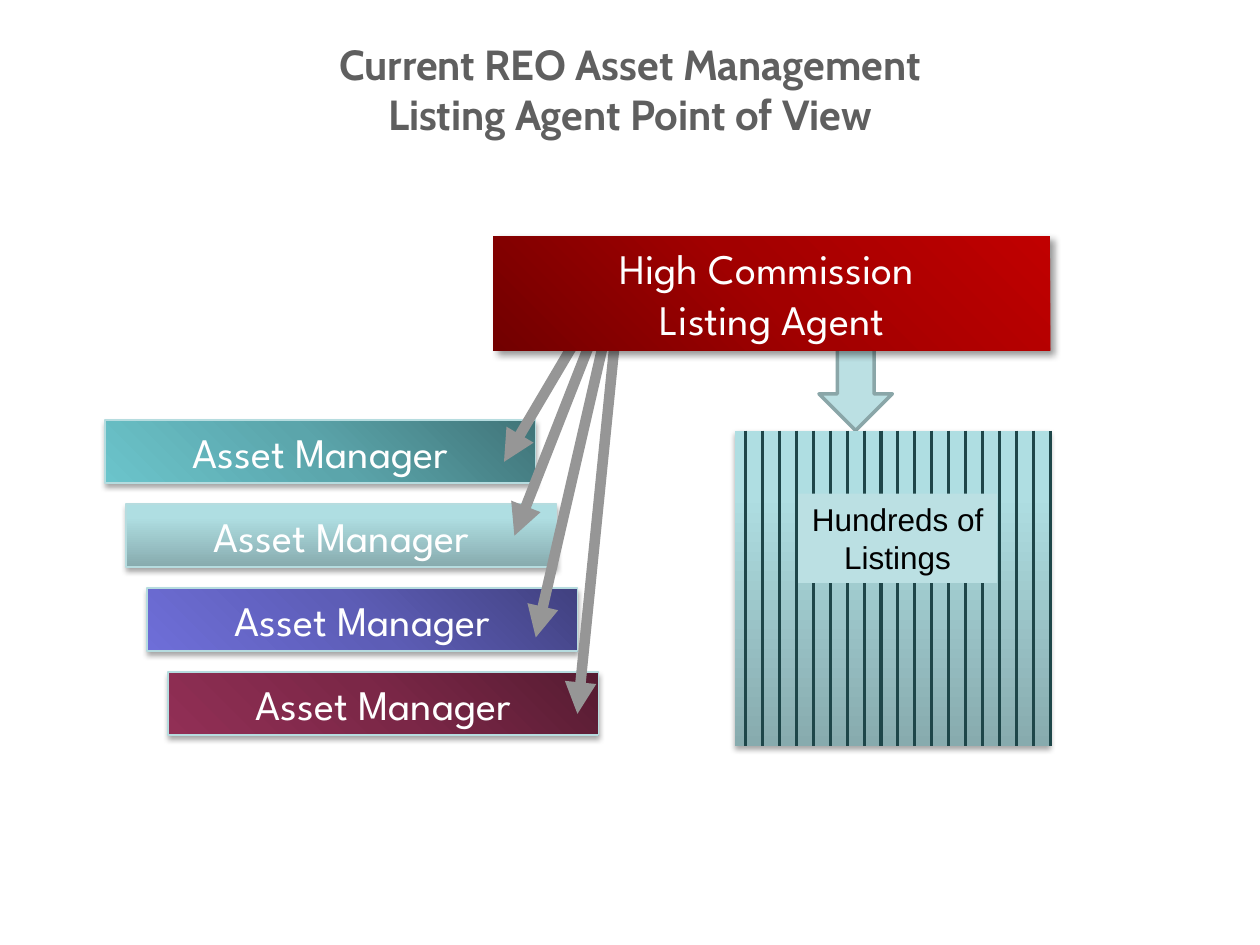
"""Build the slide on the listing agent's view of REO asset management."""
import dataclasses

import pptx
import pptx.dml.color
import pptx.enum.shapes
import pptx.enum.text
import pptx.oxml
import pptx.oxml.ns
import pptx.util

Cm = pptx.util.Cm
Pt = pptx.util.Pt
SHAPE = pptx.enum.shapes.MSO_SHAPE
ANCHOR = pptx.enum.text.MSO_ANCHOR
qn = pptx.oxml.ns.qn


def rgb(value):
    return pptx.dml.color.RGBColor.from_string(value)


def add_xml(parent, xml):
    tag, rest = xml.split(" ", 1)
    parent.append(pptx.oxml.parse_xml(f"{tag} {pptx.oxml.ns.nsdecls('a')} {rest}"))


@dataclasses.dataclass(frozen=True)
class Gradient:
    stops: tuple
    angle: int = 0
    focus: str = ""

    def direction(self):
        if self.focus:
            return f'<a:path path="circle"><a:fillToRect {self.focus}/></a:path>'
        return f'<a:lin ang="{self.angle * 60000}" scaled="1"/>'


@dataclasses.dataclass(frozen=True)
class Shadow:
    alpha: int
    blur: float
    distance: float
    angle: int


@dataclasses.dataclass(frozen=True)
class Theme:
    title_font: str = "Cabin"
    box_font: str = "League Spartan"
    label_font: str = "Arial"
    large: int = 24
    small: int = 18
    title: str = "5F5F5F"
    white: str = "FFFFFF"
    black: str = "000000"
    pale: str = "BBE0E3"
    pale_edge: str = "8AA6A8"
    bar_edge: str = "B6DCDF"
    arrow: str = "969696"
    stripe: str = "1E4649"
    teal: Gradient = Gradient(((0, "407478"), (50, "5BA5AB"), (100, "6BC4CB")), 135)
    mint: Gradient = Gradient(((0, "87ABAE"), (80, "AFDEE2"), (100, "AFE0E4")), 270)
    violet: Gradient = Gradient(((0, "414180"), (50, "5D5DB6"), (100, "6E6ED8")), 135)
    plum: Gradient = Gradient(((0, "561C32"), (50, "7B2747"), (100, "912F55")),
                              focus='l="100000" b="100000"')
    red: Gradient = Gradient(((0, "720000"), (50, "A20000"), (100, "C00000")),
                             focus='t="100000" r="100000"')
    low_shadow: Shadow = Shadow(35, 3.1, 1.8, 90)
    side_shadow: Shadow = Shadow(40, 4, 3, 45)


class SlideBuilder:
    def __init__(self, prs, theme):
        self.theme = theme
        self.s = prs.slides.add_slide(prs.slide_layouts[5])

    def text(self, sp, text, font, size, color, bold=False, wrap=True, anchor=ANCHOR.MIDDLE):
        tf = sp.text_frame
        tf.text = text
        tf.word_wrap = wrap
        tf.auto_size = pptx.enum.text.MSO_AUTO_SIZE.NONE
        tf.vertical_anchor = anchor
        for p in tf.paragraphs:
            p.alignment = pptx.enum.text.PP_ALIGN.CENTER
            for r in p.runs:
                r.font.name, r.font.size, r.font.bold = font, Pt(size), bold
                r.font.color.rgb = rgb(color)

    def title(self, text, left, top, width, height):
        sp = self.s.shapes.title
        sp.left, sp.top, sp.width, sp.height = Cm(left), Cm(top), Cm(width), Cm(height)
        t = self.theme
        self.text(sp, text, t.title_font, t.large, t.title, bold=True, anchor=ANCHOR.TOP)

    def shape(self, kind, left, top, width, height, fill, edge=None, edge_width=0.75, shadow=None):
        sp = self.s.shapes.add_shape(kind, Cm(left), Cm(top), Cm(width), Cm(height))
        if isinstance(fill, Gradient):
            self.gradient(sp, fill)
        else:
            sp.fill.solid()
            sp.fill.fore_color.rgb = rgb(fill)
        if edge:
            sp.line.color.rgb = rgb(edge)
            sp.line.width = Pt(edge_width)
        else:
            sp.line.fill.background()
        sp.shadow.inherit = False
        if shadow:
            add_xml(sp.element.spPr.find(qn("a:effectLst")),
                    f'<a:outerShdw blurRad="{Pt(shadow.blur)}" dist="{Pt(shadow.distance)}" '
                    f'dir="{shadow.angle * 60000}" algn="ctr" rotWithShape="0">'
                    f'<a:srgbClr val="{self.theme.black}"><a:alpha val="{shadow.alpha * 1000}"/>'
                    '</a:srgbClr></a:outerShdw>')
        return sp

    def gradient(self, sp, gradient):
        sp.fill.gradient()
        old = sp.element.spPr.find(qn("a:gradFill"))
        stops = "".join(f'<a:gs pos="{pos * 1000}"><a:srgbClr val="{color}"/></a:gs>'
                        for pos, color in gradient.stops)
        add_xml(sp.element.spPr, f'<a:gradFill rotWithShape="1"><a:gsLst>{stops}</a:gsLst>'
                                 f'{gradient.direction()}</a:gradFill>')
        sp.element.spPr.replace(old, sp.element.spPr[-1])

    def box(self, text, left, top, width, height, fill, shadow, edge=None):
        sp = self.shape(SHAPE.RECTANGLE, left, top, width, height, fill, edge, shadow=shadow)
        self.text(sp, text, self.theme.box_font, self.theme.large, self.theme.white)

    def line(self, shapes, start, end, color, width, arrow=False):
        c = shapes.add_connector(pptx.enum.shapes.MSO_CONNECTOR.STRAIGHT,
                                 *map(Cm, start), *map(Cm, end))
        c.line.color.rgb = rgb(color)
        c.line.width = Pt(width)
        if arrow:
            add_xml(c.element.spPr.find(qn("a:ln")), '<a:tailEnd type="triangle"/>')
        add_xml(c.element.spPr, "<a:effectLst />")

    def listings(self, text, left, top, size):
        t = self.theme
        self.shape(SHAPE.FLOWCHART_PROCESS, left, top, size, size, t.mint, shadow=t.low_shadow)
        group = self.s.shapes.add_group_shape()
        count = 19
        for i in range(count):
            x = left + size - 0.341 * (count - 1 - i)
            self.line(group.shapes, (x, top), (x, top + size), t.stripe, 1.75)
        sp = self.shape(SHAPE.RECTANGLE, left + 1.27, top + 1.27, 4.01, 1.8, t.pale)
        self.text(sp, text, t.label_font, t.small, t.black, wrap=False)


def main():
    prs = pptx.Presentation()
    prs.slide_width, prs.slide_height = Cm(25.4), Cm(19.05)
    t = Theme()
    b = SlideBuilder(prs, t)
    b.title("Current REO Asset Management\vListing Agent Point of View", 0, 0.64, 25.4, 2.31)
    b.shape(SHAPE.DOWN_ARROW, 16.51, 6.99, 1.48, 1.69, t.pale, t.pale_edge, 2)
    for i, fill in enumerate((t.teal, t.mint, t.violet, t.plum)):
        b.box("Asset Manager", 2.12 + 0.423 * i, 8.47 + 1.693 * i, 8.68, 1.27,
              fill, t.low_shadow, t.bar_edge)
    for start, end in (((12.28, 5.72), (10.16, 9.31)), ((12.28, 5.93), (10.37, 10.8)),
                       ((12.49, 5.5), (10.8, 12.85)), ((12.49, 5.93), (11.64, 14.39))):
        b.line(b.s.shapes, start, end, t.arrow, 6, arrow=True)
    b.box("High Commission \vListing Agent", 9.95, 4.76, 11.22, 2.31, t.red, t.side_shadow)
    b.listings("Hundreds of\vListings", 14.82, 8.68, 6.35)
    prs.save("out.pptx")


if __name__ == "__main__":
    main()
